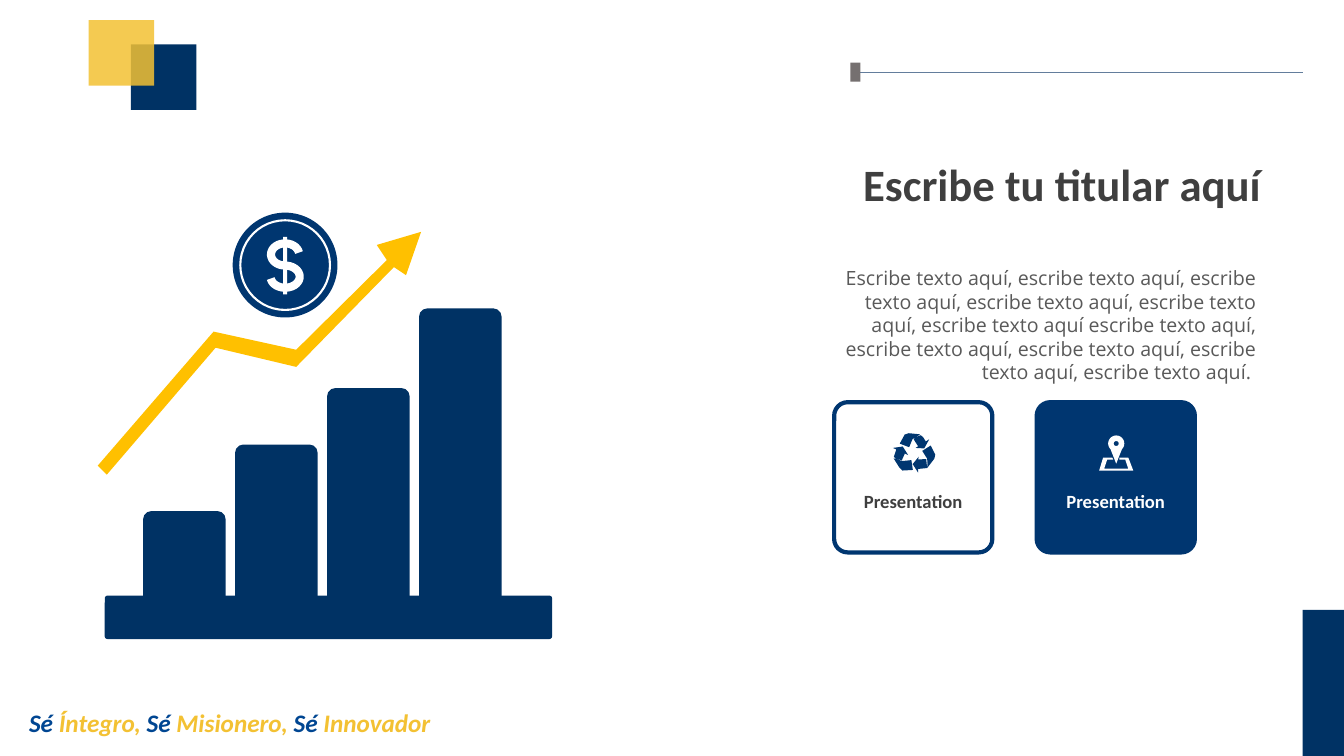
import math

from lxml import etree
from pptx import Presentation
from pptx import util as u
from pptx.dml.color import RGBColor
from pptx.enum import shapes, text
from pptx.oxml.ns import qn

CELL = u.Inches(0.1)
COLS, ROWS = 133.4, 75
NAVY = RGBColor(0x00, 0x32, 0x64)
BLUE = RGBColor(0x00, 0x36, 0x70)
MOTTO_BLUE = RGBColor(0x00, 0x46, 0x92)
GOLD = RGBColor(0xF3, 0xC1, 0x33)
AMBER = RGBColor(0xFF, 0xC0, 0x00)
GREY = RGBColor(0x75, 0x70, 0x70)
RULE = RGBColor(0x63, 0x7D, 0x9C)
INK = RGBColor(0x3F, 0x3F, 0x3F)
BODY_INK = RGBColor(0x59, 0x59, 0x59)
WHITE = RGBColor(0xFF, 0xFF, 0xFF)

RECYCLE = [
    [(23, 25), (23, 28), (31, 28), (32, 30), (31, 36), (28, 37), (23, 37), (23, 41), (18, 32)],
    [(0, 24), (4, 27), (8, 29), (17, 29), (17, 39), (7, 38), (4, 35)],
    [(35, 14), (40, 23), (39, 27), (32, 36), (32, 27), (27, 20)],
    [(1, 14), (11, 14), (14, 23), (12, 21), (8, 28), (0, 24), (4, 16)],
    [(27, 2), (32, 8), (35, 6), (31, 15), (21, 15), (24, 13), (20, 7), (24, 3)],
    [(15, 1), (26, 1), (19, 7), (15, 15), (6, 11), (11, 2)],
]
MAP_SHEET = [(4, 22), (13, 22), (14, 24), (8, 24), (5, 33), (29, 33), (26, 24), (20, 24),
             (20, 22), (29, 22), (34, 35), (0, 35)]
TREND = [(115, 100), (197, 118), (287, 29), (277, 14), (321, 1), (306, 44), (294, 36),
         (197, 135), (117, 116), (9, 242), (0, 233)]


def cells(*lengths):
    """Turn grid cells into lengths."""
    return [round(n * CELL) for n in lengths]


def paint(shape, fill=None, line=None, width=0):
    """Give a shape its fill and outline, without a shadow."""
    shape.shadow.inherit = False
    if fill is None:
        shape.fill.background()
    else:
        shape.fill.solid()
        shape.fill.fore_color.rgb = fill
    if line is None:
        shape.line.fill.background()
    else:
        shape.line.color.rgb = line
        shape.line.width = u.Pt(width)
    return shape


def block(slide, box, fill=None, kind=shapes.MSO_SHAPE.RECTANGLE, **outline):
    """Place a preset shape in a box of cells."""
    return paint(slide.shapes.add_shape(kind, *cells(*box)), fill, **outline)


def outline_shape(slide, left, top, contours, close=True, **look):
    """Draw contours given in tenths of a cell from the left and top."""
    (x, y), *rest = [(px * 100, py * 100) for px, py in contours[0]]
    builder = slide.shapes.build_freeform(x, y, scale=CELL / 1000)
    builder.add_line_segments(rest, close=close)
    for contour in contours[1:]:
        (x, y), *rest = [(px * 100, py * 100) for px, py in contour]
        builder.move_to(x, y)
        builder.add_line_segments(rest, close=close)
    return paint(builder.convert_to_shape(*cells(left, top)), **look)


def arc(cx, cy, rx, ry, start, end, steps=24):
    """List the points of an elliptical arc between two angles."""
    angles = [math.radians(start + (end - start) * i / steps) for i in range(steps + 1)]
    return [(cx + rx * math.cos(a), cy + ry * math.sin(a)) for a in angles]


def label(slide, box, runs, align=text.PP_ALIGN.LEFT, inset=(1, 0.5), **formats):
    """Write coloured runs in one paragraph inside a box."""
    frame = slide.shapes.add_textbox(*cells(*box)).text_frame
    across, down = cells(*inset)
    margins = {"margin_left": across, "margin_right": across,
               "margin_top": down, "margin_bottom": down, "word_wrap": True}
    for name, value in margins.items():
        setattr(frame, name, value)
    frame.paragraphs[0].alignment = align
    for words, color in runs:
        run = frame.paragraphs[0].add_run()
        run.text = words
        run.font.color.rgb = color
        for name, value in formats.items():
            setattr(run.font, name, value)


def header_rule(slide, left, top, width, height):
    """Draw the thin rule with its grey stop."""
    middle = top + height / 2
    rule = slide.shapes.add_connector(
        shapes.MSO_CONNECTOR.STRAIGHT, *cells(left + width, middle, left + 0.9, middle))
    rule.line.color.rgb = RULE
    rule.line.width = u.Pt(0.75)
    etree.SubElement(rule.element.spPr, qn("a:effectLst"))
    block(slide, (left, top, 1, height), GREY)


def corner_squares(slide, left, top, side):
    """Overlap a translucent gold square on a navy one."""
    block(slide, (left + 4.2, top + 2.4, side, side), NAVY)
    gold = block(slide, (left, top, side, side), GOLD)
    tint = gold.element.spPr.find(qn("a:solidFill"))[0]
    etree.SubElement(tint, qn("a:alpha"), val="85000")


def motto(slide, left, top, width, height):
    """Write the two-colour motto."""
    runs = []
    for virtue in (" Íntegro, ", " Misionero, ", " Innovador"):
        runs += [("Sé", MOTTO_BLUE), (virtue, GOLD)]
    label(slide, (left, top, width, height), runs,
          name="Calibri", size=u.Pt(18), bold=True, italic=True)


def coin(slide, left, top, side):
    """Draw the dollar coin."""
    oval = shapes.MSO_SHAPE.OVAL
    block(slide, (left, top, side, side), BLUE, oval)
    rim = 0.75
    block(slide, (left + rim, top + rim, side - 2 * rim, side - 2 * rim),
          kind=oval, line=WHITE, width=1.5)
    center = side * 5
    curve = arc(center, 41.5, 14, 11, -10, -270) + arc(center, 63.5, 14.5, 11, -90, 170)
    outline_shape(slide, left, top, [curve], close=False, line=WHITE, width=5.8)
    block(slide, (left + side / 2 - 0.2, top + 2.4, 0.4, 5.7), WHITE)


def growth_figure(slide, left, top, width, height):
    """Draw the rising bars, the trend arrow and the coin."""
    base = 4.3
    floor = top + height - base
    for i, rise in enumerate((8.4, 15, 20.6, 28.5)):
        bar = block(slide, (left + 3.8 + 9.13 * i, floor - rise, 8.2, rise + 0.1),
                    NAVY, shapes.MSO_SHAPE.ROUND_2_SAME_RECTANGLE)
        bar.adjustments[0] = 0.1
    plinth = block(slide, (left, floor, width, base), NAVY, shapes.MSO_SHAPE.ROUNDED_RECTANGLE)
    plinth.adjustments[0] = 0.06
    outline_shape(slide, left - 0.7, top + 1.8, [TREND], fill=AMBER)
    coin(slide, left + 12.7, top, 10.4)


def message(slide, left, top, width, height):
    """Write the headline and the paragraph below it."""
    right = text.PP_ALIGN.RIGHT
    label(slide, (left, top, width, 5.4), [("Escribe tu titular aquí", INK)], right, (0.5, 0),
          name="Calibri", size=u.Pt(32), bold=True)
    body = ("Escribe texto aquí, escribe texto aquí, escribe texto aquí, escribe texto aquí, "
            "escribe texto aquí, escribe texto aquí escribe texto aquí, escribe texto aquí, "
            "escribe texto aquí, escribe texto aquí, escribe texto aquí. ")
    label(slide, (left, top + 10.3, width, height - 10.3), [(body, BODY_INK)], right,
          name="Open Sans", size=u.Pt(14))


def card(slide, left, top, width, height, fill, ink):
    """Draw a rounded card with its caption."""
    frame = block(slide, (left, top, width, height), fill,
                  shapes.MSO_SHAPE.ROUNDED_RECTANGLE, line=BLUE, width=3)
    frame.adjustments[0] = 0.09
    label(slide, (left + 1.5, top + 8.2, width - 3, 3.3), [("Presentation", ink)],
          text.PP_ALIGN.CENTER, name="Calibri", size=u.Pt(13.3), bold=True)


def cards(slide, left, top, width, height):
    """Place the recycling card and the map card side by side."""
    side = 15.7
    second = left + width - side
    card(slide, left, top, side, height, None, INK)
    card(slide, second, top, side, height, BLUE, WHITE)
    recycle = outline_shape(slide, left + 5.9, top + 2.9, RECYCLE, fill=BLUE)
    recycle.rotation = 237.7
    pin = arc(17, 8, 8, 8, 135, 405) + [(17, 28)]
    hole = arc(17, 8, 2.5, 2.5, 0, 360)
    outline_shape(slide, second + 6.2, top + 3.3, [MAP_SHEET, pin, hole], fill=WHITE)


def main():
    """Build the slide and save it."""
    deck = Presentation()
    deck.slide_width, deck.slide_height = cells(COLS, ROWS)
    slide = deck.slides.add_slide(deck.slide_layouts[6])
    header_rule(slide, 84.4, 6.2, 44.9, 1.9)
    corner_squares(slide, 8.8, 2, 6.5)
    motto(slide, 1.9, 69.7, 55.6, 4)
    block(slide, (COLS - 4.1, 60.5, 4.1, ROWS - 60.5), NAVY)
    growth_figure(slide, 10.4, 21.1, 44.4, 42.3)
    message(slide, 81.2, 15.6, 44.5, 23.1)
    cards(slide, 82.8, 39.9, 35.8, 14.9)
    deck.save("out.pptx")


if __name__ == "__main__":
    main()
